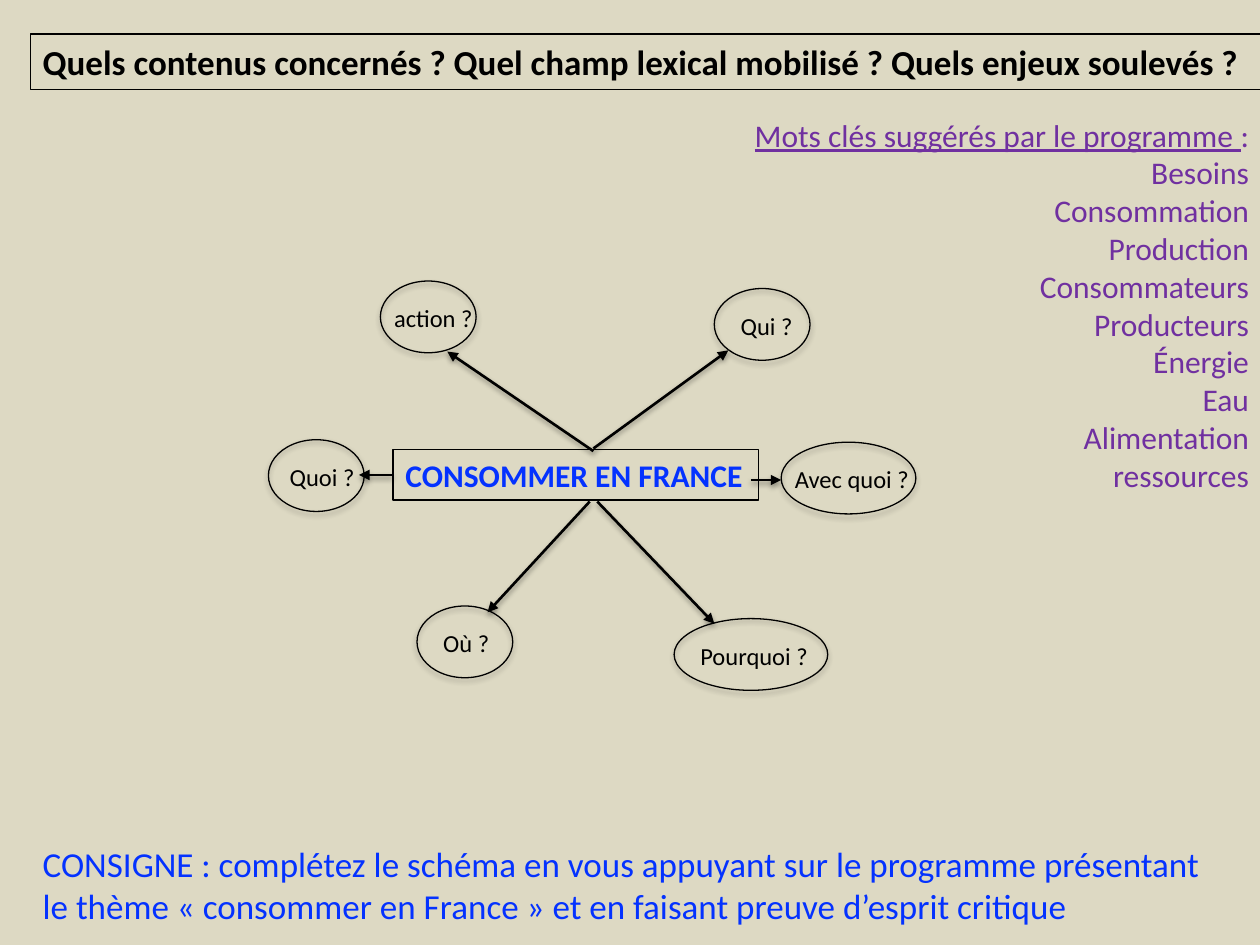
from dataclasses import dataclass
from lxml.etree import SubElement
from pptx import Presentation
from pptx.dml.color import RGBColor
from pptx.enum.shapes import MSO_CONNECTOR as Connector, MSO_SHAPE as Shape
from pptx.enum.text import MSO_ANCHOR as Anchor, MSO_AUTO_SIZE as AutoSize, PP_ALIGN as Align
from pptx.oxml.ns import qn
from pptx.util import Pt


@dataclass(frozen=True)
class Theme:
    font: str = "Calibri"
    background: str = "DDD9C3"
    black: str = "000000"
    blue: str = "0432FF"
    purple: str = "7030A0"
    large: int = 20
    medium: int = 18
    small: int = 14
    thin: float = 0.75
    thick: float = 1.5
    blur: float = 3.1


THEME = Theme()


@dataclass(frozen=True)
class Bubble:
    label: str
    left: float
    top: float
    width: float
    inset: float
    label_width: float
    start: tuple
    end: tuple


BUBBLES = [
    Bubble("Qui ?", 254.8, 4.3, 54.7, 7.9, 44.6, (185.7, 95.7), (262.8, 39.6)),
    Bubble("Avec quoi ?", 293, 92.1, 77, 0.7, 80.6, (275.7, 113.7), (293, 113.7)),
    Bubble("Quoi ?", 0, 90.7, 54.7, 5, 51.8, (71.2, 110.8), (51.8, 110.8)),
    Bubble("Où ?", 84.9, 185.7, 54.7, 7.9, 41, (183.6, 126), (125.2, 189.3)),
    Bubble("Pourquoi ?", 231.8, 192.9, 87.8, 7.9, 76.3, (187.9, 126), (254.8, 195.8)),
    Bubble("action ?", 64, 0, 54.7, 0.7, 59.8, (185.7, 97.2), (102.2, 40.3)),
]

KEYWORDS = ["Besoins", "Consommation", "Production", "Consommateurs", "Producteurs",
            "Énergie", "Eau", "Alimentation", "ressources"]


def rgb(value):
    return RGBColor.from_string(value)


def draw_line(line, width):
    line.color.rgb = rgb(THEME.black)
    line.width = Pt(width)


def add_shadow(shape, distance, opacity):
    effects = SubElement(shape._element.spPr, qn("a:effectLst"))
    shadow = SubElement(effects, qn("a:outerShdw"), blurRad=str(Pt(THEME.blur)),
                        dist=str(Pt(distance)), dir="5400000", rotWithShape="0")
    color = SubElement(shadow, qn("a:srgbClr"), val=THEME.black)
    SubElement(color, qn("a:alpha"), val=str(opacity * 1000))


def add_text(slide, box, paragraphs, size, color, wrap=False, align=Align.LEFT, bold=False):
    shape = slide.shapes.add_textbox(*map(Pt, box))
    frame = shape.text_frame
    settings = {"word_wrap": wrap, "auto_size": AutoSize.SHAPE_TO_FIT_TEXT,
                "vertical_anchor": Anchor.TOP}
    for name, value in settings.items():
        setattr(frame, name, value)
    formats = {"name": THEME.font, "size": Pt(size), "bold": bold}
    for index, runs in enumerate(paragraphs):
        paragraph = frame.add_paragraph() if index else frame.paragraphs[0]
        paragraph.alignment = align
        for text, underline in runs:
            run = paragraph.add_run()
            run.text = text
            for name, value in {**formats, "underline": underline}.items():
                setattr(run.font, name, value)
            run.font.color.rgb = rgb(color)
    return shape


def plain(text):
    return [(text, False)]


def add_title(slide, box):
    text = "Quels contenus concernés ? Quel champ lexical mobilisé ? Quels enjeux soulevés ?"
    shape = add_text(slide, box, [plain(text)], THEME.large, THEME.black, bold=True)
    draw_line(shape.line, THEME.thin)


def add_arrow(slide, start, end):
    arrow = slide.shapes.add_connector(Connector.STRAIGHT, *map(Pt, (*start, *end)))
    draw_line(arrow.line, THEME.thick)
    SubElement(arrow.line._get_or_add_ln(), qn("a:tailEnd"), type="triangle")
    add_shadow(arrow, 1.6, 38)
    return arrow


def add_bubble(slide, box, label, inset, label_width):
    left, top, width, height = box
    add_text(slide, (left + inset, top + 9.2, label_width, 24.5), [plain(label)],
             THEME.small, THEME.black)
    ellipse = slide.shapes.add_shape(Shape.OVAL, *map(Pt, box))
    ellipse.fill.background()
    draw_line(ellipse.line, THEME.thin)
    add_shadow(ellipse, 1.8, 35)


def add_mind_map(slide, box):
    left, top, width, height = box

    def place(point):
        return left + point[0], top + point[1]

    center = add_text(slide, (*place((71.2, 96.4)), 208.8, 28.8),
                      [plain("CONSOMMER EN FRANCE")], THEME.medium, THEME.blue, bold=True)
    draw_line(center.line, THEME.thin)
    for bubble in BUBBLES:
        arrow = add_arrow(slide, place(bubble.start), place(bubble.end))
        if bubble.label == "Quoi ?":
            arrow.begin_connect(center, 1)
        add_bubble(slide, (*place((bubble.left, bubble.top)), bubble.width, 41),
                   bubble.label, bubble.inset, bubble.label_width)


def add_instruction(slide, box):
    text = ("CONSIGNE : complétez le schéma en vous appuyant sur le programme présentant "
            "le thème « consommer en France » et en faisant preuve d’esprit critique")
    add_text(slide, box, [plain(text)], THEME.large, THEME.blue, wrap=True)


def add_keywords(slide, box):
    heading = [("Mots clés suggérés par le programme ", True), (":", False)]
    add_text(slide, box, [heading, *map(plain, KEYWORDS)], THEME.medium, THEME.purple,
             wrap=True, align=Align.RIGHT)


def main():
    presentation = Presentation()
    presentation.slide_width, presentation.slide_height = Pt(720), Pt(540)
    slide = presentation.slides.add_slide(presentation.slide_layouts[6])
    slide.background.fill.solid()
    slide.background.fill.fore_color.rgb = rgb(THEME.background)
    add_title(slide, (17.3, 19.4, 704.2, 31.7))
    add_mind_map(slide, (153.4, 160.6, 370, 234))
    add_instruction(slide, (17.3, 478.1, 690.5, 55.4))
    add_keywords(slide, (416.2, 62.6, 304.6, 247))
    presentation.save("out.pptx")


if __name__ == "__main__":
    main()
